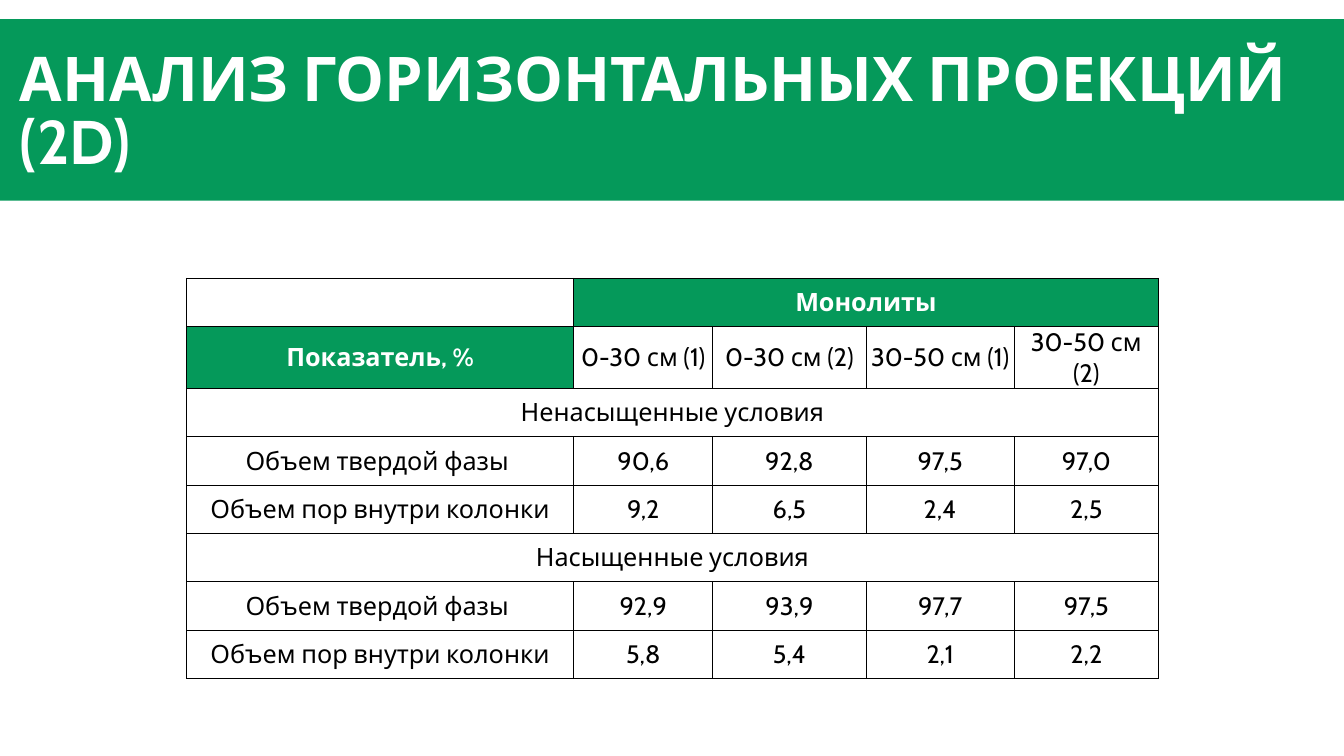
import pptx
import pptx.dml.color
import pptx.enum.shapes
import pptx.enum.text
import pptx.oxml
import pptx.oxml.ns
import pptx.util

Inches = pptx.util.Inches
Pt = pptx.util.Pt

COLUMN_WIDTHS = [3.84, 1.38, 1.52, 1.47, 1.43]
ROW_HEIGHT = 0.48
ROWS = [
    ["", "Монолиты"],
    ["Показатель, %", "0-30 см (1)", "0-30 см (2)", "30-50 см (1)", "30-50 см (2)"],
    ["Ненасыщенные условия"],
    ["Объем твердой фазы ", "90,6", "92,8", "97,5", "97,0"],
    ["Объем пор внутри колонки", "9,2", "6,5", "2,4", "2,5"],
    ["Насыщенные условия"],
    ["Объем твердой фазы ", "92,9", "93,9", "97,7", "97,5"],
    ["Объем пор внутри колонки", "5,8", "5,4", "2,1", "2,2"],
]
HEADER_CELLS = {(0, 1), (1, 0)}


class SlideBuilder:
    """Holds the style and the current slide, and draws its elements."""

    font_name = "Cabin"
    colors = {"green": "05995A", "white": "FFFFFF", "black": "000000"}

    def __init__(self, slide):
        self.slide = slide

    def color(self, name):
        return pptx.dml.color.RGBColor.from_string(self.colors[name])

    def style(self, paragraph, size, color, bold):
        paragraph.font.name = self.font_name
        paragraph.font.size = Pt(size)
        paragraph.font.bold = bold
        paragraph.font.color.rgb = self.color(color)

    def band(self, left, top, width, height):
        shape = self.slide.shapes.add_shape(
            pptx.enum.shapes.MSO_SHAPE.RECTANGLE,
            Inches(left), Inches(top), Inches(width), Inches(height))
        shape.shadow.inherit = False
        shape.fill.solid()
        shape.fill.fore_color.rgb = self.color("green")
        shape.line.fill.background()

    def title(self, text, left, top, width, height):
        box = self.slide.shapes.add_textbox(
            Inches(left), Inches(top), Inches(width), Inches(height))
        frame = box.text_frame
        frame.word_wrap = True
        frame.vertical_anchor = pptx.enum.text.MSO_ANCHOR.MIDDLE
        paragraph = frame.paragraphs[0]
        paragraph.text = text
        paragraph.line_spacing = 0.85
        self.style(paragraph, 44, "white", True)

    def borders(self, cell):
        properties = cell._tc.get_or_add_tcPr()
        namespace = pptx.oxml.ns.nsdecls("a")
        for side in "LRTB":
            properties.append(pptx.oxml.parse_xml(
                f'<a:ln{side} {namespace} w="{Pt(0.5)}"><a:solidFill>'
                f'<a:srgbClr val="{self.colors["black"]}"/>'
                f'</a:solidFill></a:ln{side}>'))

    def cell(self, cell, text, header):
        cell.margin_left = cell.margin_right = cell.margin_top = Inches(0.01)
        cell.margin_bottom = 0
        cell.vertical_anchor = pptx.enum.text.MSO_ANCHOR.MIDDLE
        paragraph = cell.text_frame.paragraphs[0]
        paragraph.text = text
        paragraph.alignment = pptx.enum.text.PP_ALIGN.CENTER
        self.style(paragraph, 18, "white" if header else "black", header)
        self.borders(cell)
        if header:
            cell.fill.solid()
            cell.fill.fore_color.rgb = self.color("green")
        else:
            cell.fill.background()

    def table(self, left, top, widths, row_height, rows, header_cells):
        table = self.slide.shapes.add_table(
            len(rows), len(widths), Inches(left), Inches(top),
            Inches(sum(widths)), Inches(row_height * len(rows))).table
        table.first_row = table.horz_banding = False
        for column, width in zip(table.columns, widths):
            column.width = Inches(width)
        last = len(widths) - 1
        for row, texts in enumerate(rows):
            table.rows[row].height = Inches(row_height)
            padded = texts + [""] * (len(widths) - len(texts))
            for column, text in enumerate(padded):
                self.cell(table.cell(row, column), text, (row, column) in header_cells)
            if len(texts) < len(widths):
                table.cell(row, len(texts) - 1).merge(table.cell(row, last))


def main():
    deck = pptx.Presentation()
    deck.slide_width = Inches(13.33)
    deck.slide_height = Inches(7.5)
    page = SlideBuilder(deck.slides.add_slide(deck.slide_layouts[6]))
    page.band(0, 0.19, 13.33, 1.8)
    page.title("АНАЛИЗ ГОРИЗОНТАЛЬНЫХ ПРОЕКЦИЙ (2D)", 0.1, 0.31, 13.23, 1.65)
    page.table(1.85, 2.76, COLUMN_WIDTHS, ROW_HEIGHT, ROWS, HEADER_CELLS)
    deck.save("out.pptx")


if __name__ == "__main__":
    main()
